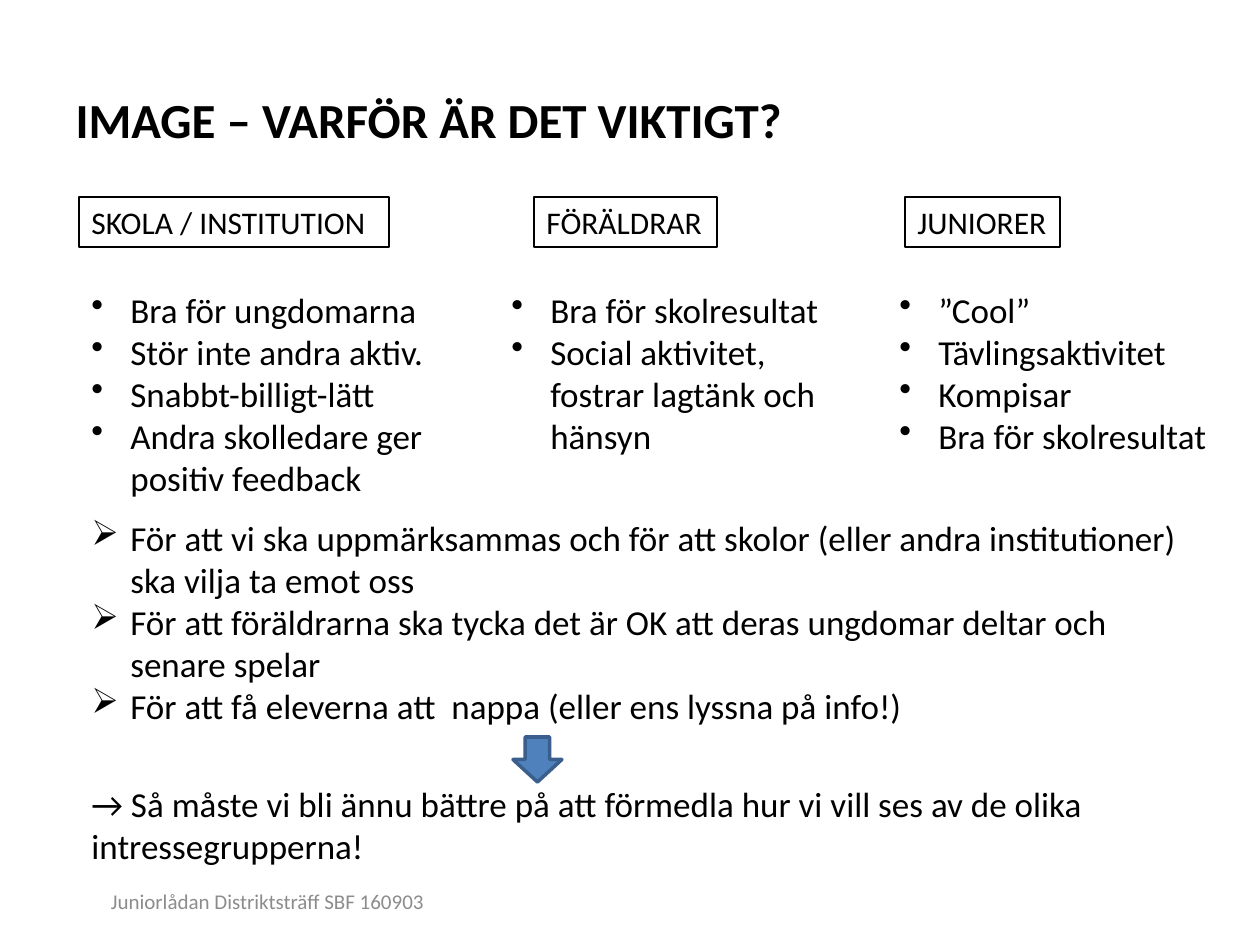
import dataclasses
import pptx
import pptx.util
import pptx.dml.color
import pptx.enum.shapes
import pptx.enum.text
import pptx.oxml


@dataclasses.dataclass(frozen=True)
class Theme:
    font: str = "Calibri"
    ink: str = "000000"
    muted: str = "8C8C8C"
    accent: str = "4F81BD"
    accent_edge: str = "3A5F8C"
    title_size: int = 28
    body_size: int = 20
    heading_size: int = 18
    footer_size: int = 12


theme = Theme()
scale = 914400 / 126
indent = 39
align = pptx.enum.text.PP_ALIGN
anchor = pptx.enum.text.MSO_ANCHOR


def place(*lengths):
    return [pptx.util.Emu(round(length * scale)) for length in lengths]


def write(box, lines, size, color=theme.ink, bullet=None, bold=False,
          alignment=align.LEFT, vertical=anchor.TOP):
    frame = box.text_frame
    frame_format = {"word_wrap": True, "vertical_anchor": vertical,
                    "auto_size": pptx.enum.text.MSO_AUTO_SIZE.NONE}
    for name, value in frame_format.items():
        setattr(frame, name, value)
    frame.text = "\n".join(lines)
    for para in frame.paragraphs:
        para.alignment = alignment
        if bullet:
            properties = para._p.get_or_add_pPr()
            margin = place(indent)[0]
            properties.set("marL", str(margin))
            properties.set("indent", str(-margin))
            mark = pptx.oxml.parse_xml(
                '<a:buChar xmlns:a="http://schemas.openxmlformats.org/drawingml/2006/main"'
                f' char="{bullet}"/>')
            properties.append(mark)
        for span in para.runs:
            font_format = {"name": theme.font, "size": pptx.util.Pt(size), "bold": bold}
            for name, value in font_format.items():
                setattr(span.font, name, value)
            span.font.color.rgb = pptx.dml.color.RGBColor.from_string(color)


deck = pptx.Presentation()
deck.slide_width, deck.slide_height = place(1260, 945)
page = deck.slides.add_slide(deck.slide_layouts[5])

title = page.shapes.title
title_format = dict(zip(("left", "top", "width", "height"), place(63, 73, 1134, 92)))
for name, value in title_format.items():
    setattr(title, name, value)
write(title, ["IMAGE – VARFÖR ÄR DET VIKTIGT?"], theme.title_size,
      bold=True, vertical=anchor.MIDDLE)

footer = page.shapes.add_textbox(*place(68, 876, 399, 50))
write(footer, ["Juniorlådan Distriktsträff SBF 160903"], theme.footer_size,
      theme.muted, alignment=align.CENTER, vertical=anchor.MIDDLE)

groups = [
    ("SKOLA / INSTITUTION", 79, 310, 79, 365,
     ["Bra för ungdomarna", "Stör inte andra aktiv.", "Snabbt-billigt-lätt",
      "Andra skolledare ger positiv feedback"]),
    ("FÖRÄLDRAR", 534, 183, 499, 355,
     ["Bra för skolresultat", "Social aktivitet, fostrar lagtänk och hänsyn"]),
    ("JUNIORER", 905, 155, 887, 355,
     ["”Cool”", "Tävlingsaktivitet", "Kompisar", "Bra för skolresultat"]),
]
for heading, heading_left, heading_width, list_left, list_width, points in groups:
    heading_box = page.shapes.add_textbox(*place(heading_left, 197, heading_width, 50))
    heading_box.line.color.rgb = pptx.dml.color.RGBColor.from_string(theme.ink)
    heading_box.line.width = pptx.util.Pt(0.75)
    write(heading_box, [heading], theme.heading_size)
    heading_box.text_frame.margin_right = 0
    list_box = page.shapes.add_textbox(*place(list_left, 282, list_width, 224))
    write(list_box, points, theme.body_size, bullet="•")

reasons = [
    "För att vi ska uppmärksammas och för att skolor (eller andra institutioner) ska vilja ta emot oss",
    "För att föräldrarna ska tycka det är OK att deras ungdomar deltar och senare spelar",
    "För att få eleverna att  nappa (eller ens lyssna på info!)",
]
reasons_box = page.shapes.add_textbox(*place(79, 510, 1123, 222))
write(reasons_box, reasons, theme.body_size, bullet="➢")

conclusion_box = page.shapes.add_textbox(*place(79, 776, 1123, 99))
write(conclusion_box,
      ["→ Så måste vi bli ännu bättre på att förmedla hur vi vill ses av de olika intressegrupperna!"],
      theme.body_size)

arrow = page.shapes.add_shape(pptx.enum.shapes.MSO_SHAPE.DOWN_ARROW, *place(513, 737, 49, 45))
arrow.shadow.inherit = False
arrow.fill.solid()
arrow.fill.fore_color.rgb = pptx.dml.color.RGBColor.from_string(theme.accent)
arrow.line.color.rgb = pptx.dml.color.RGBColor.from_string(theme.accent_edge)
arrow.line.width = pptx.util.Pt(2)

deck.save("out.pptx")
